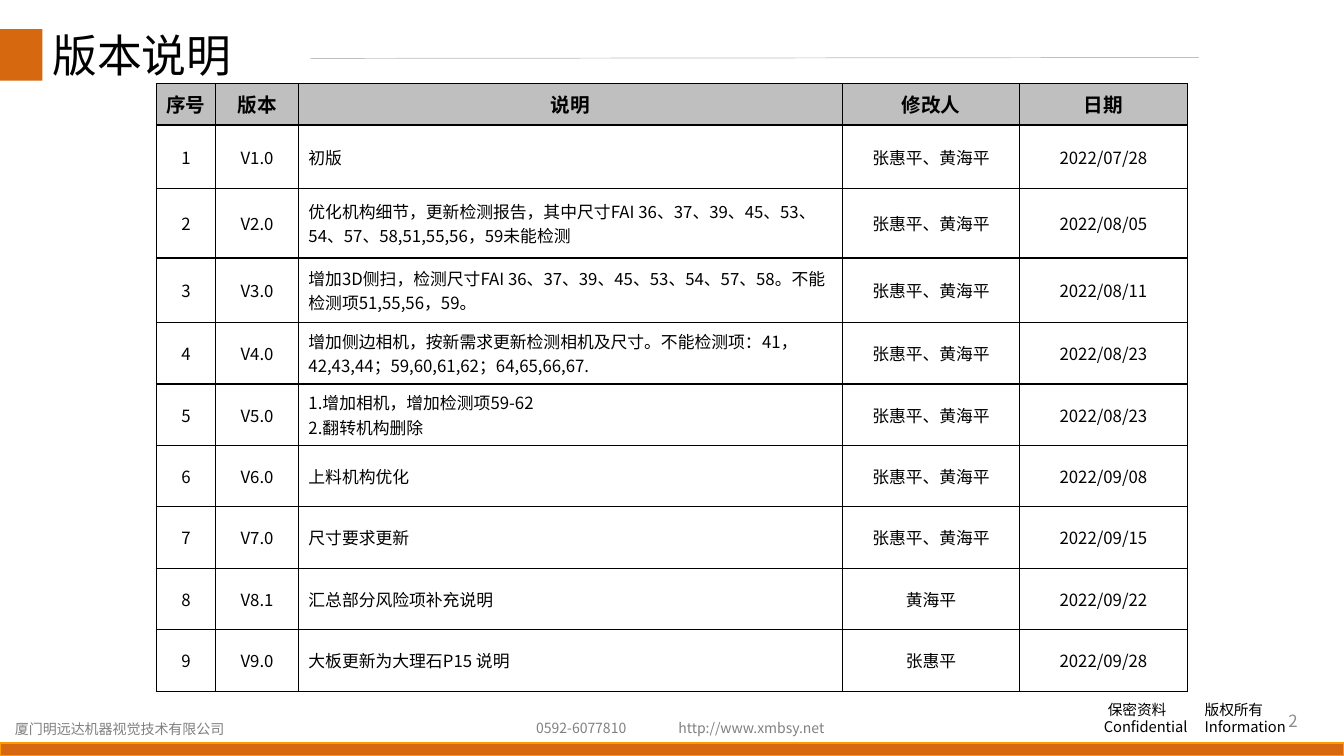
from dataclasses import dataclass

from lxml import etree
from pptx import Presentation
from pptx import util as u
from pptx.dml.color import RGBColor
from pptx.enum import shapes, text
from pptx.oxml.ns import qn

CELL = u.Inches(0.01)  # side of one grid square


@dataclass(frozen=True)
class Theme:
    font: str = "Noto Sans CJK SC"
    orange: str = "D6680F"
    amber: str = "FF9900"
    black: str = "000000"
    white: str = "FFFFFF"
    silver: str = "BFBFBF"
    contact: str = "808080"
    number: str = "8C8C8C"
    title_pt: float = 32
    head_pt: float = 14
    body_pt: float = 12
    notice_pt: float = 10.5
    contact_pt: float = 10


@dataclass(frozen=True)
class Box:
    """An area in grid columns and rows."""
    col: int
    row: int
    cols: int
    rows: int

    def inner(self, col, row, cols, rows):
        return Box(self.col + col, self.row + row, cols, rows)

    def emu(self):
        return [n * CELL for n in (self.col, self.row, self.cols, self.rows)]


T = Theme()
PAGE = Box(0, 0, 1333, 750)
HEADER = Box(0, 29, 1333, 71)
HISTORY = Box(155, 83, 1023, 604)
FOOTER = Box(0, 690, 1333, 60)

COLUMNS = [59, 82, 540, 175, 167]
ROWS = [41, 63, 69, 64] + [61] * 6
HEADINGS = ["序号", "版本", "说明", "修改人", "日期"]
BOTH = "张惠平、黄海平"
VERSIONS = [
    ("V1.0", "初版", BOTH, "2022/07/28"),
    ("V2.0", "优化机构细节，更新检测报告，其中尺寸FAI 36、37、39、45、53、54、57、58,51,55,56，59未能检测",
     BOTH, "2022/08/05"),
    ("V3.0", "增加3D侧扫，检测尺寸FAI 36、37、39、45、53、54、57、58。不能检测项51,55,56，59。",
     BOTH, "2022/08/11"),
    ("V4.0", "增加侧边相机，按新需求更新检测相机及尺寸。不能检测项：41，42,43,44；59,60,61,62；64,65,66,67.",
     BOTH, "2022/08/23"),
    ("V5.0", "1.增加相机，增加检测项59-62\n2.翻转机构删除", BOTH, "2022/08/23"),
    ("V6.0", "上料机构优化", BOTH, "2022/09/08"),
    ("V7.0", "尺寸要求更新", BOTH, "2022/09/15"),
    ("V8.1", "汇总部分风险项补充说明", "黄海平", "2022/09/22"),
    ("V9.0", "大板更新为大理石P15 说明", "张惠平", "2022/09/28"),
]


def rgb(value):
    return RGBColor.from_string(value)


def write(tf, words, size, color=T.black, align=text.PP_ALIGN.LEFT, bold=False):
    """Fill a text frame, one paragraph per line of words."""
    tf.word_wrap = True
    for i, line in enumerate(words.split("\n")):
        p = tf.paragraphs[0] if i == 0 else tf.add_paragraph()
        p.alignment = align
        r = p.add_run()
        r.text = line
        r.font.name, r.font.size, r.font.bold = T.font, u.Pt(size), bold
        r.font.color.rgb = rgb(color)
        east_asian = etree.Element(qn("a:ea"), typeface=T.font)
        r._r.rPr.find(qn("a:latin")).addnext(east_asian)


def add_text(s, box, words, size, **style):
    tf = s.shapes.add_textbox(*box.emu()).text_frame
    write(tf, words, size, **style)
    return tf


def add_bar(s, box, line=None):
    bar = s.shapes.add_shape(shapes.MSO_SHAPE.RECTANGLE, *box.emu())
    bar.shadow.inherit = False
    bar.fill.solid()
    bar.fill.fore_color.rgb = rgb(T.orange)
    if line:
        bar.line.color.rgb = rgb(line)
        bar.line.width = u.Pt(1)
    else:
        bar.line.fill.background()


def add_header(s, box, title):
    add_bar(s, box.inner(0, 0, 42, 51))
    x, y, w, h = box.inner(308, 29, 881, -1).emu()
    rule = s.shapes.add_connector(shapes.MSO_CONNECTOR.STRAIGHT, x, y, x + w, y + h)
    rule.line.color.rgb = rgb(T.silver)
    rule.line.width = u.Pt(0.5)
    etree.SubElement(rule._element.spPr, qn("a:effectLst"))
    tf = add_text(s, box.inner(42, 0, 276, 71), title, T.title_pt)
    tf.paragraphs[0].line_spacing = 0.9


def add_borders(cell):
    tc_pr = cell._tc.get_or_add_tcPr()
    for i, side in enumerate(("lnL", "lnR", "lnT", "lnB")):
        ln = etree.Element(qn(f"a:{side}"), w=str(u.Pt(1)))
        fill = etree.SubElement(ln, qn("a:solidFill"))
        etree.SubElement(fill, qn("a:srgbClr"), val=T.black)
        tc_pr.insert(i, ln)


def add_history(s, box):
    table = s.shapes.add_table(len(ROWS), len(COLUMNS), *box.emu()).table
    for column, width in zip(table.columns, COLUMNS):
        column.width = width * CELL
    for row, height in zip(table.rows, ROWS):
        row.height = height * CELL
    numbered = [(str(n), *version) for n, version in enumerate(VERSIONS, 1)]
    for i, record in enumerate([HEADINGS] + numbered):
        for j, words in enumerate(record):
            cell = table.cell(i, j)
            head, description = i == 0, i > 0 and j == 2
            cell.vertical_anchor = text.MSO_ANCHOR.MIDDLE
            cell.margin_left = cell.margin_right = (10 if description else 5) * CELL
            cell.fill.solid()
            cell.fill.fore_color.rgb = rgb(T.silver if head else T.white)
            write(cell.text_frame, words, T.head_pt if head else T.body_pt, bold=head,
                  align=text.PP_ALIGN.LEFT if description else text.PP_ALIGN.CENTER)
            add_borders(cell)


def add_footer(s, box, number):
    add_bar(s, box.inner(0, 47, 1333, 13), T.amber)
    notice = add_text(s, box.inner(1085, 0, 217, 45),
                      "保密资料\t版权所有\nConfidential\tInformation", T.notice_pt)
    for p, indent, stop in zip(notice.paragraphs, (4, 0), (81, 90)):
        p_pr = p._p.get_or_add_pPr()
        p_pr.set("indent", str(indent * CELL))
        tabs = etree.SubElement(p_pr, qn("a:tabLst"))
        etree.SubElement(tabs, qn("a:tab"), pos=str(stop * CELL), algn="l")
    for col, row, cols, words in ((663, 19, 167, "http://www.xmbsy.net"),
                                  (522, 19, 120, "0592-6077810"),
                                  (5, 20, 235, "厦门明远达机器视觉技术有限公司")):
        add_text(s, box.inner(col, row, cols, 27), words, T.contact_pt, color=T.contact)
    tf = add_text(s, box.inner(997, 5, 300, 40), number, T.body_pt,
                  color=T.number, align=text.PP_ALIGN.RIGHT)
    tf.vertical_anchor = text.MSO_ANCHOR.MIDDLE


def main():
    prs = Presentation()
    prs.slide_width, prs.slide_height = PAGE.emu()[2:]
    s = prs.slides.add_slide(prs.slide_layouts[6])
    add_header(s, HEADER, "版本说明")
    add_history(s, HISTORY)
    add_footer(s, FOOTER, "2")
    prs.save("out.pptx")


if __name__ == "__main__":
    main()
